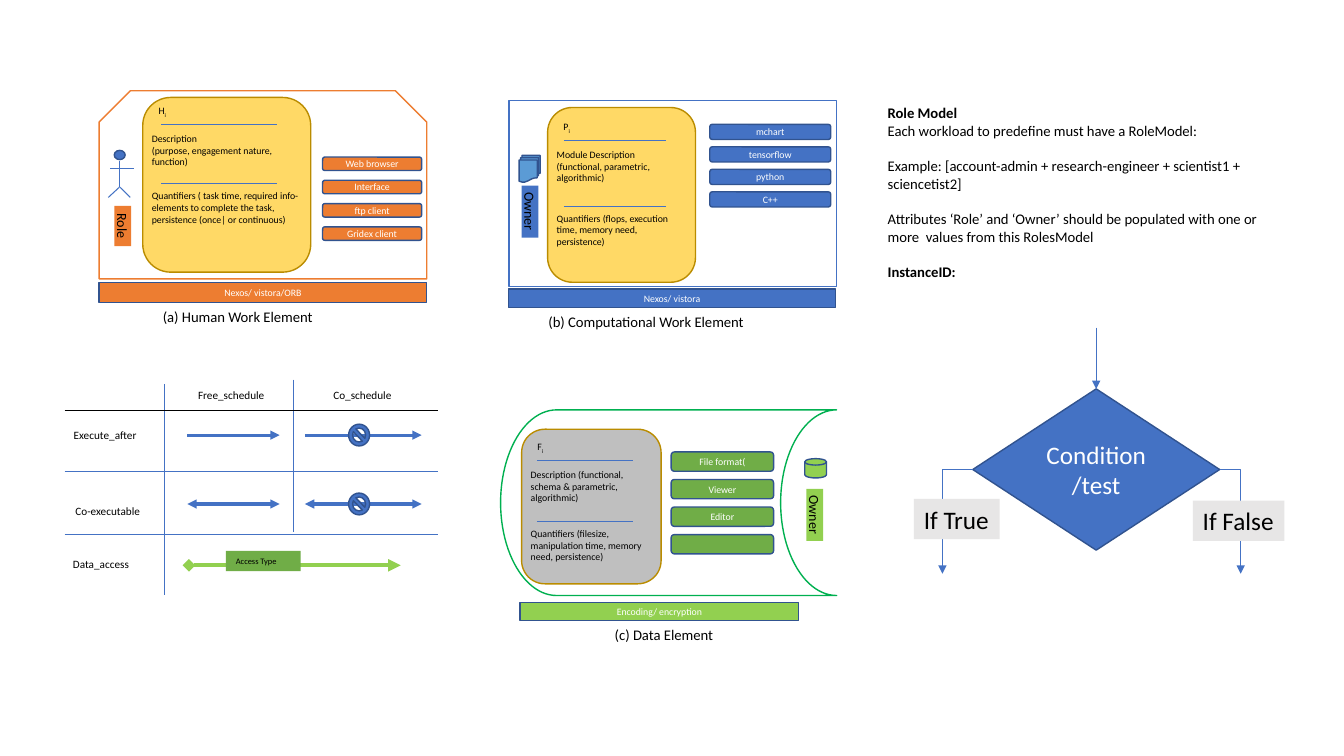
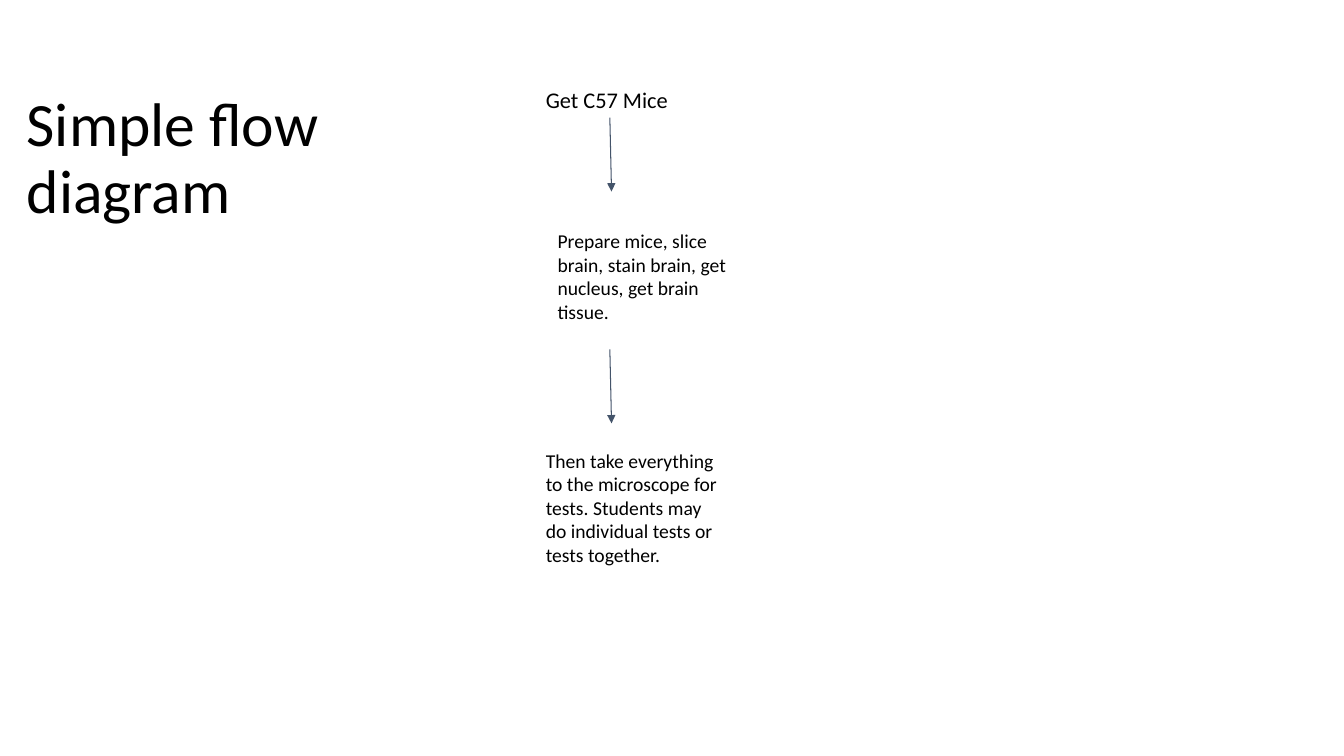
from dataclasses import dataclass
from typing import NamedTuple

from lxml.etree import SubElement
from pptx import Presentation
from pptx.dml.color import RGBColor
from pptx.enum.shapes import MSO_CONNECTOR as Link, MSO_SHAPE as Preset
from pptx.enum.text import MSO_ANCHOR as Anchor, PP_ALIGN as Align
from pptx.oxml.ns import qn
from pptx.util import Inches, Pt

SLIDE_WIDTH, SLIDE_HEIGHT = Inches(13.33), Inches(7.5)
COLUMNS, ROWS = 160, 90
FONT = "Calibri"
BLACK, WHITE, GREY, PALE = "000000", "FFFFFF", "BFBFBF", "E7E6E6"
BLUE, NAVY, SKY, SLATE = "4472C4", "31538F", "5B9BD5", "44546A"
ORANGE, YELLOW, GOLD = "ED7D31", "FFD966", "BA8C00"
GREEN, LIME, EMERALD = "70AD47", "92D050", "00B050"


class Box(NamedTuple):
    left: float
    top: float
    width: float
    height: float

    def inner(self, x, y, width, height):
        return Box(self.left + x, self.top + y, width, height)

    def point(self, x, y):
        return self.left + x, self.top + y

    def emu(self):
        return (across(self.left), down(self.top),
                across(self.width), down(self.height))


@dataclass
class Element:
    box: Box
    outline: int
    accent: str
    card: tuple
    card_fill: str
    card_rules: tuple
    symbol: str
    description: list
    quantifiers: str
    tools: list
    tool_box: tuple
    tool_step: float
    tool_fill: str
    platform: str
    platform_box: tuple
    platform_fill: str
    caption: str
    caption_x: float
    tag: str
    tag_box: tuple


def across(columns):
    return round(SLIDE_WIDTH * columns / COLUMNS)


def down(rows):
    return round(SLIDE_HEIGHT * rows / ROWS)


def color(value):
    return RGBColor.from_string(value)


def write(shape, lines, size, ink=BLACK, align=Align.LEFT,
          anchor=Anchor.TOP, inset=(0.1, 0.05)):
    frame = shape.text_frame
    frame.word_wrap = True
    frame.vertical_anchor = anchor
    frame.margin_left = frame.margin_right = Inches(inset[0])
    frame.margin_top = frame.margin_bottom = Inches(inset[1])
    frame.text = "\n".join(lines)
    for paragraph in frame.paragraphs:
        paragraph.alignment = align
        font = paragraph.font
        font.name, font.size = FONT, Pt(size)
        font.color.rgb = color(ink)
    return frame


def label(slide, box, lines, size, **style):
    return write(slide.shapes.add_textbox(*box.emu()), lines, size, **style)


def figure(slide, preset, box, fill=None, edge=None):
    shape = slide.shapes.add_shape(preset, *box.emu())
    shape.shadow.inherit = False
    if fill:
        shape.fill.solid()
        shape.fill.fore_color.rgb = color(fill)
    else:
        shape.fill.background()
    if edge:
        shape.line.color.rgb = color(edge)
        shape.line.width = Pt(1)
    else:
        shape.line.fill.background()
    return shape


def button(slide, preset, box, fill, caption, size=7):
    shape = figure(slide, preset, box, fill, NAVY)
    if caption:
        write(shape, [caption], size, WHITE, Align.CENTER, Anchor.MIDDLE)


def connect(slide, start, end, ink=BLUE, width=0.75, head=None, tail=None,
            corner=False):
    kind = Link.ELBOW if corner else Link.STRAIGHT
    line = slide.shapes.add_connector(kind, across(start[0]), down(start[1]),
                                      across(end[0]), down(end[1]))
    line.line.color.rgb = color(ink)
    line.line.width = Pt(width)
    properties = line.element.spPr
    if corner:
        properties.find(qn("a:prstGeom")).set("prst", "bentConnector2")
    stroke = properties.get_or_add_ln()
    for end_name, arrow in (("a:headEnd", head), ("a:tailEnd", tail)):
        if arrow:
            SubElement(stroke, qn(end_name)).set("type", arrow)
    SubElement(properties, qn("a:effectLst"))


def draw_card(slide, box, element):
    figure(slide, Preset.ROUNDED_RECTANGLE, box, element.card_fill, GOLD)
    upper, lower = element.card_rules
    for y in element.card_rules:
        connect(slide, box.point(0.11 * box.width, y),
                box.point(0.8 * box.width, y))
    symbol = label(slide, box.inner(0.7, upper - 2.9, 12, 2.6),
                   [element.symbol], 7)
    index = symbol.paragraphs[0].add_run()
    index.text = "i"
    index._r.get_or_add_rPr().set("baseline", "-25000")
    label(slide, box.inner(-0.1, upper + 0.4, box.width, 5.4),
          element.description, 7)
    label(slide, box.inner(-0.1, lower + 0.1, box.width, 5.4),
          [element.quantifiers], 7)


def draw_element(slide, element):
    box = element.box
    figure(slide, element.outline, box, edge=element.accent)
    draw_card(slide, box.inner(*element.card), element)
    x, y, width, height = element.tool_box
    for row, tool in enumerate(element.tools):
        button(slide, Preset.ROUNDED_RECTANGLE,
               box.inner(x, y + row * element.tool_step, width, height),
               element.tool_fill, tool)
    platform_box = box.inner(*element.platform_box)
    button(slide, Preset.RECTANGLE, platform_box,
           element.platform_fill, element.platform)
    caption_top = platform_box.top + platform_box.height
    label(slide, Box(box.left + element.caption_x, caption_top, 31.6, 3.5),
          [element.caption], 10.5)
    tag = figure(slide, Preset.RECTANGLE, box.inner(*element.tag_box),
                 element.platform_fill)
    tag.rotation = 90
    write(tag, [element.tag], 10, align=Align.CENTER, inset=(0, 0))


def draw_person(slide, box):
    figure(slide, Preset.OVAL, box.inner(0.7, 0, 1.3, 1.1), BLUE, NAVY)
    limbs = [((1.3, 1.3), (1.3, 4.4)), ((0.2, 2.2), (3, 2.2)),
             ((1.3, 4.4), (0, 5.6)), ((1.3, 4.3), (2.6, 5.6))]
    for start, end in limbs:
        connect(slide, box.point(*start), box.point(*end))


def draw_schedule(slide, box):
    for x, top, bottom in ((12.1, 0.5, box.height), (27.4, 0, 18.1)):
        connect(slide, box.point(x, top), box.point(x, bottom))
    for y, ink in ((3.7, BLACK), (10.9, BLUE), (18.4, BLUE)):
        connect(slide, box.point(0.2, y), box.point(box.width, y), ink)
    texts = [("Free_schedule", 14.9, 0.5), ("Co_schedule", 31, 0.5),
             ("Execute_after", 0.1, 5.2), ("Co-executable", 0.3, 14.3),
             ("Data_access", 0, 20.6)]
    for text, x, y in texts:
        label(slide, box.inner(x, y, 13.8, 2.9), [text], 8)
    for y, head in ((6.6, None), (14.8, "triangle")):
        for left, right in ((14.8, 25.8), (28.8, 42.7)):
            connect(slide, box.point(left, y), box.point(right, y),
                    width=2.25, head=head, tail="triangle")
        figure(slide, Preset.NO_SYMBOL, box.inner(34, y - 1.3, 2.5, 2.6),
               BLUE, NAVY)
    connect(slide, box.point(15, 22.1), box.point(40.2, 22.1), LIME, 3,
            "diamond", "triangle")
    access = figure(slide, Preset.RECTANGLE, box.inner(19.4, 20.4, 8.9, 2.4),
                    GREEN)
    write(access, ["Access Type"], 6)


def draw_role_model(slide, box):
    paragraphs = [
        "Role Model",
        "Each workload to predefine must have a RoleModel:",
        "Example: [account-admin + research-engineer + scientist1 + "
        "sciencetist2]",
        "Attributes ‘Role’ and ‘Owner’ should be populated with one or "
        "more  values from this RolesModel",
        "InstanceID:",
    ]
    frame = label(slide, box, paragraphs, 10.5)
    for paragraph in frame.paragraphs[2:]:
        paragraph.space_before = Pt(12.7)
    for heading in (frame.paragraphs[0], frame.paragraphs[-1]):
        heading.font.bold = True


def draw_decision(slide, box):
    diamond = box.inner(7, 7.3, 29.4, 19.2)
    middle = diamond.top + diamond.height / 2
    center = diamond.left + diamond.width / 2
    button(slide, Preset.DIAMOND, diamond, BLUE, "Condition/test", 18)
    connect(slide, (center, box.top), (center, diamond.top), tail="triangle")
    branches = [("If True", diamond.left, 3.4, (0, 20.4, 10.2, 4.8)),
                ("If False", diamond.left + diamond.width, 38.9,
                 (33.2, 20.6, 10.9, 4.8))]
    for text, corner_x, x, place in branches:
        connect(slide, (corner_x, middle), box.point(x, box.height),
                tail="triangle", corner=True)
        write(figure(slide, Preset.RECTANGLE, box.inner(*place), PALE),
              [text], 18)


def draw_steps(slide, box):
    steps = [("Get C57 Mice", 16, (0, 0, 24.4, 5.6)),
             ("Prepare mice, slice brain, stain brain, get nucleus, "
              "get brain tissue.", 14, (1.4, 17, 22.9, 13.7)),
             ("Then take everything to the microscope for tests. Students "
              "may do individual tests or tests together.", 14,
              (0, 43.1, 22.9, 16.6))]
    for text, size, place in steps:
        label(slide, box.inner(*place), [text], size, inset=(0.1, 0.1))
    for y in (4.9, 32.5):
        connect(slide, box.point(8.8, y), box.point(9, y + 8.8), SLATE,
                tail="triangle")


HUMAN = Element(
    box=Box(11.8, 10.8, 39, 22.4), outline=Preset.SNIP_2_SAME_RECTANGLE,
    accent=ORANGE, card=(5.2, 0.8, 20, 20.8), card_fill=YELLOW,
    card_rules=(3.2, 10.3), symbol="H",
    description=["Description", "(purpose, engagement nature, function)"],
    quantifiers="Quantifiers ( task time, required info-elements to complete "
                "the task, persistence (once| or continuous)",
    tools=["Web browser", "Interface", "ftp client", "Gridex client"],
    tool_box=(26.6, 7.9, 11.8, 1.6), tool_step=2.77, tool_fill=ORANGE,
    platform="Nexos/ vistora/ORB", platform_box=(0, 22.8, 39, 2.4),
    platform_fill=ORANGE, caption="(a) Human Work Element", caption_x=6.4,
    tag="Role", tag_box=(0.4, 15.1, 4.8, 2))

COMPUTATION = Element(
    box=Box(60.6, 12, 39, 22.1), outline=Preset.RECTANGLE,
    accent=BLUE, card=(4.6, 0.8, 17.6, 20.8), card_fill=YELLOW,
    card_rules=(3.9, 11.8), symbol="P",
    description=["Module Description", "(functional, parametric, algorithmic)"],
    quantifiers="Quantifiers (flops, execution time, memory need, persistence)",
    tools=["mchart", "tensorflow", "python", "C++"],
    tool_box=(23.9, 2.8, 14.4, 1.8), tool_step=2.68, tool_fill=BLUE,
    platform="Nexos/ vistora", platform_box=(-0.1, 22.4, 39, 2.2),
    platform_fill=BLUE, caption="(b) Computational Work Element",
    caption_x=3.5, tag="Owner", tag_box=(-0.6, 12.2, 6.2, 2))

DATA = Element(
    box=Box(59.6, 48.8, 40, 22.1), outline=Preset.FLOWCHART_STORED_DATA,
    accent=EMERALD, card=(2.5, 2.3, 16.6, 18.4), card_fill=GREY,
    card_rules=(3.7, 11), symbol="F",
    description=["Description (functional, schema & parametric, algorithmic)"],
    quantifiers="Quantifiers (filesize, manipulation time, memory need, "
                "persistence)",
    tools=["File format(", "Viewer", "Editor", ""],
    tool_box=(20.3, 5, 12.2, 2.3), tool_step=3.28, tool_fill=GREEN,
    platform="Encoding/ encryption", platform_box=(2.3, 22.9, 33.2, 2.2),
    platform_fill=LIME, caption="(c) Data Element", caption_x=12.4,
    tag="Owner", tag_box=(34.3, 11.5, 6.2, 2))


def build_elements(slide):
    for element in (DATA, HUMAN, COMPUTATION):
        draw_element(slide, element)
    draw_person(slide, HUMAN.box.inner(1.1, 7.1, 3, 5.6))
    figure(slide, Preset.FLOWCHART_MULTIDOCUMENT,
           COMPUTATION.box.inner(1.2, 6.5, 2.5, 3.2), SKY, NAVY)
    figure(slide, Preset.FLOWCHART_MAGNETIC_DISK,
           DATA.box.inner(36.2, 5.8, 2.6, 2.3), LIME, NAVY)
    draw_schedule(slide, Box(7.5, 45.2, 44.7, 25.6))
    draw_role_model(slide, Box(104.5, 11.8, 49.6, 22.4))
    draw_decision(slide, Box(108.8, 39, 44.2, 29.3))


def build_flow(slide):
    title = label(slide, Box(2, 1.6, 42.2, 34.9), ["Simple flow diagram"], 44,
                  anchor=Anchor.MIDDLE)
    title.paragraphs[0].line_spacing = 0.9
    draw_steps(slide, Box(63.8, 9.1, 24.4, 59.7))


def main():
    deck = Presentation()
    deck.slide_width, deck.slide_height = SLIDE_WIDTH, SLIDE_HEIGHT
    for build in (build_elements, build_flow):
        build(deck.slides.add_slide(deck.slide_layouts[6]))
    deck.save("out.pptx")


if __name__ == "__main__":
    main()
